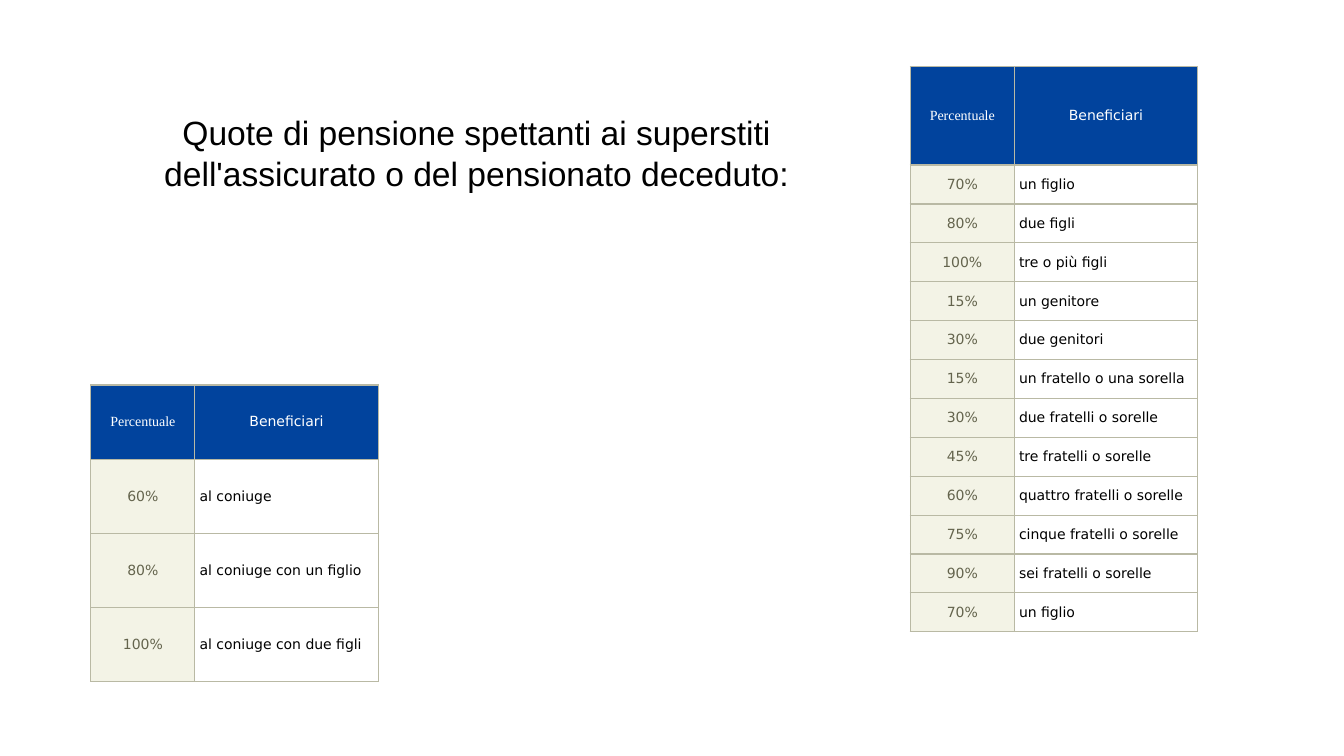
from lxml.etree import SubElement
from pptx import Presentation
from pptx.dml.color import RGBColor
from pptx.enum.text import MSO_ANCHOR, PP_ALIGN
from pptx.oxml.ns import qn
from pptx.util import Cm, Pt

BLUE = RGBColor(0x01, 0x43, 0x9D)
CREAM = RGBColor(0xF3, 0xF3, 0xE6)
OLIVE = RGBColor(0x64, 0x64, 0x4D)
BORDER = RGBColor(0xB9, 0xB9, 0xA4)
WHITE = RGBColor(0xFF, 0xFF, 0xFF)
BLACK = RGBColor(0x00, 0x00, 0x00)

HEADER = ("Percentuale", "Beneficiari")
SPOUSE_SHARES = [
    ("60%", "al coniuge"),
    ("80%", "al coniuge con un figlio"),
    ("100%", "al coniuge con due figli"),
]
FAMILY_SHARES = [
    ("70%", "un figlio"),
    ("80%", "due figli"),
    ("100%", "tre o più figli"),
    ("15%", "un genitore"),
    ("30%", "due genitori"),
    ("15%", "un fratello o una sorella"),
    ("30%", "due fratelli o sorelle"),
    ("45%", "tre fratelli o sorelle"),
    ("60%", "quattro fratelli o sorelle"),
    ("75%", "cinque fratelli o sorelle"),
    ("90%", "sei fratelli o sorelle"),
    ("70%", "un figlio"),
]


class SlideBuilder:
    """Draws titles and share tables in one style on the current slide."""

    title_font, header_font, body_font = "Arial", "Times New Roman", "DejaVu Sans"
    title_size, table_size = Pt(24), Pt(10)
    col_widths = Cm(2.62), Cm(4.62)

    def __init__(self, slide):
        self.s = slide

    def add_run(self, p, text, font, size, color, align):
        p.alignment = align
        r = p.add_run()
        r.text = text
        r.font.name, r.font.size, r.font.bold = font, size, False
        r.font.color.rgb = color

    def title(self, x, y, w, h, text):
        sp = self.s.shapes.add_textbox(Cm(x), Cm(y), Cm(w), Cm(h))
        tf = sp.text_frame
        tf.word_wrap = True
        tf.vertical_anchor = MSO_ANCHOR.MIDDLE
        tf.margin_bottom = 0
        self.add_run(tf.paragraphs[0], text, self.title_font, self.title_size,
                     BLACK, PP_ALIGN.CENTER)

    def cell(self, cell, text, font, color, align, fill):
        cell.margin_left = cell.margin_right = Cm(0.12)
        cell.margin_top = cell.margin_bottom = 0
        cell.vertical_anchor = MSO_ANCHOR.MIDDLE
        tcPr = cell._tc.get_or_add_tcPr()
        for side in ("a:lnL", "a:lnR", "a:lnT", "a:lnB"):
            ln = SubElement(tcPr, qn(side), w=str(Pt(1)))
            solid = SubElement(ln, qn("a:solidFill"))
            SubElement(solid, qn("a:srgbClr"), val=str(BORDER))
        if fill is None:
            cell.fill.background()
        else:
            cell.fill.solid()
            cell.fill.fore_color.rgb = fill
        self.add_run(cell.text_frame.paragraphs[0], text, font,
                     self.table_size, color, align)

    def table(self, x, y, header_h, row_h, shares):
        height = header_h + row_h * len(shares)
        frame = self.s.shapes.add_table(len(shares) + 1, 2, Cm(x), Cm(y),
                                        sum(self.col_widths), Cm(height))
        tbl = frame.table
        tbl.first_row = tbl.horz_banding = False
        for col, width in zip(tbl.columns, self.col_widths):
            col.width = width
        for i, row in enumerate(tbl.rows):
            row.height = Cm(row_h if i else header_h)
        for c, text in enumerate(HEADER):
            font = self.body_font if c else self.header_font
            self.cell(tbl.cell(0, c), text, font, WHITE, PP_ALIGN.CENTER, BLUE)
        for i, (share, heir) in enumerate(shares, 1):
            self.cell(tbl.cell(i, 0), share, self.body_font, OLIVE,
                      PP_ALIGN.CENTER, CREAM)
            self.cell(tbl.cell(i, 1), heir, self.body_font, BLACK,
                      PP_ALIGN.LEFT, None)


def main():
    prs = Presentation()
    prs.slide_width, prs.slide_height = Cm(33.87), Cm(19.05)
    builder = SlideBuilder(prs.slides.add_slide(prs.slide_layouts[6]))
    builder.table(2.29, 9.7, 1.87, 1.87, SPOUSE_SHARES)
    builder.table(22.94, 1.68, 2.48, 0.98, FAMILY_SHARES)
    builder.title(2.03, 2.69, 19.96, 2.18,
                  "Quote di pensione spettanti ai superstiti "
                  "dell'assicurato o del pensionato deceduto:")
    prs.save("out.pptx")


if __name__ == "__main__":
    main()
